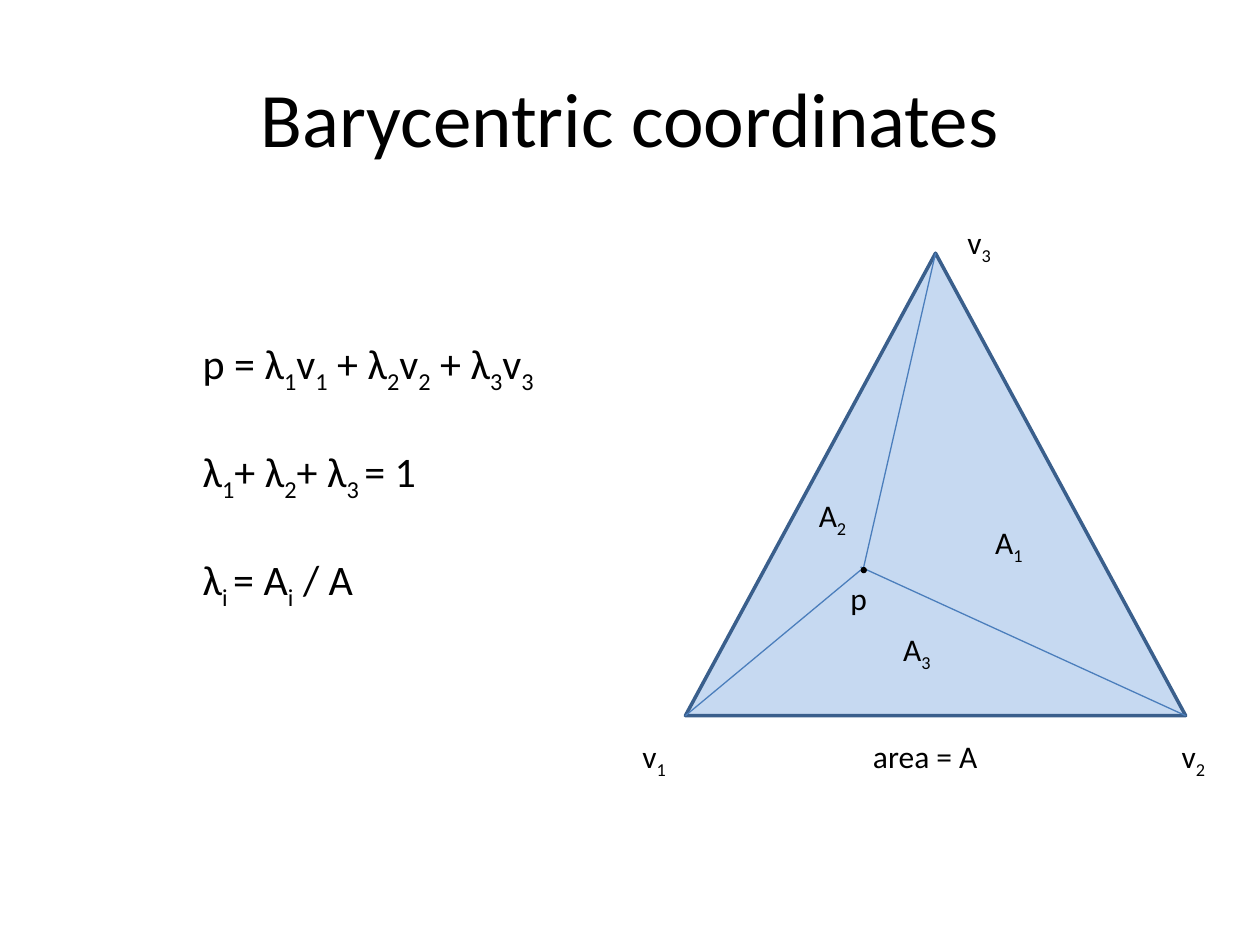
from pptx import Presentation
from pptx import util as u
from pptx.dml.color import RGBColor
from pptx.enum import shapes, text
from pptx.oxml.ns import qn
from lxml import etree


def color(hex_code):
    return RGBColor.from_string(hex_code)


class Board:
    font = "Calibri"
    ink = "000000"
    area = "C6D9F1"
    edge = "3A5F8C"
    spoke = "4B7EBC"
    columns, rows = 100, 75

    def __init__(self, deck):
        self.width, self.height = deck.slide_width, deck.slide_height
        self.slide = deck.slides.add_slide(deck.slide_layouts[6])

    def x(self, column):
        return round(self.width * column / self.columns)

    def y(self, row):
        return round(self.height * row / self.rows)

    def box(self, left, top, width, height):
        return self.x(left), self.y(top), self.x(width), self.y(height)

    def label(self, box, lines, size=18, gap=0, centred=False):
        frame = self.slide.shapes.add_textbox(*self.box(*box)).text_frame
        frame.word_wrap = True
        if centred:
            frame.vertical_anchor = text.MSO_ANCHOR.MIDDLE
        for number, line in enumerate(lines):
            paragraph = frame.add_paragraph() if number else frame.paragraphs[0]
            paragraph.font.name = self.font
            paragraph.font.size = u.Pt(size)
            paragraph.font.color.rgb = color(self.ink)
            paragraph.alignment = text.PP_ALIGN.CENTER if centred else text.PP_ALIGN.LEFT
            paragraph.space_before = u.Pt(gap if number else 0)
            for index, part in enumerate(line.replace("]", "[").split("[")):
                if part:
                    run = paragraph.add_run()
                    run.text = part
                    if index % 2:
                        run._r.get_or_add_rPr().set("baseline", "-25000")

    def shape(self, kind, box, fill, edge=None, weight=2):
        figure = self.slide.shapes.add_shape(kind, *self.box(*box))
        figure.shadow.inherit = False
        figure.fill.solid()
        figure.fill.fore_color.rgb = color(fill)
        if edge:
            figure.line.color.rgb = color(edge)
            figure.line.width = u.Pt(weight)
        else:
            figure.line.fill.background()

    def line(self, start, end):
        link = self.slide.shapes.add_connector(
            shapes.MSO_CONNECTOR.STRAIGHT,
            self.x(start[0]), self.y(start[1]), self.x(end[0]), self.y(end[1]))
        link.line.color.rgb = color(self.spoke)
        link.line.width = u.Pt(0.75)
        etree.SubElement(link._element.spPr, qn("a:effectLst"))


def main():
    deck = Presentation()
    deck.slide_width, deck.slide_height = u.Inches(10), u.Inches(7.5)
    board = Board(deck)

    board.label((5, 3, 90, 12.5), ["Barycentric coordinates"], size=44, centred=True)

    left, top, base, height = 54.4, 20.1, 39.7, 36.7
    bottom = top + height
    v1, v2, v3 = (left, bottom), (left + base, bottom), (left + base / 2, top)
    board.shape(shapes.MSO_SHAPE.ISOSCELES_TRIANGLE, (left, top, base, height),
                board.area, board.edge)

    formulas = ["p = λ[1]v[1] + λ[2]v[2] + λ[3]v[3]",
                "λ[1]+ λ[2]+ λ[3 ]= 1",
                "λ[i ]= A[i] / A"]
    board.label((15.1, 26.3, 39.2, 25.2), formulas, size=24, gap=29)

    dot = 0.5
    p_left, p_top = 68.3, 45
    for vertex, end in ((v1, (p_left, p_top + dot / 2)),
                        (v3, (p_left + dot / 2, p_top)),
                        (v2, (p_left, p_top))):
        board.line(vertex, end)
    board.shape(shapes.MSO_SHAPE.OVAL, (p_left, p_top, dot, dot), board.ink)

    caption_row = 58
    names = [("v[1]", 50, caption_row), ("v[3]", 75.8, 17.2), ("v[2]", 92.8, caption_row),
             ("p", 66.5, 45.5), ("A[3]", 70.7, 49.5), ("A[2]", 64, 38.9), ("A[1]", 78, 41)]
    for name, column, row in names:
        board.label((column, row, 4.4, 4), [name])
    board.label((68.3, caption_row, 11.9, 4), ["area = A"])

    deck.save("out.pptx")


if __name__ == "__main__":
    main()
